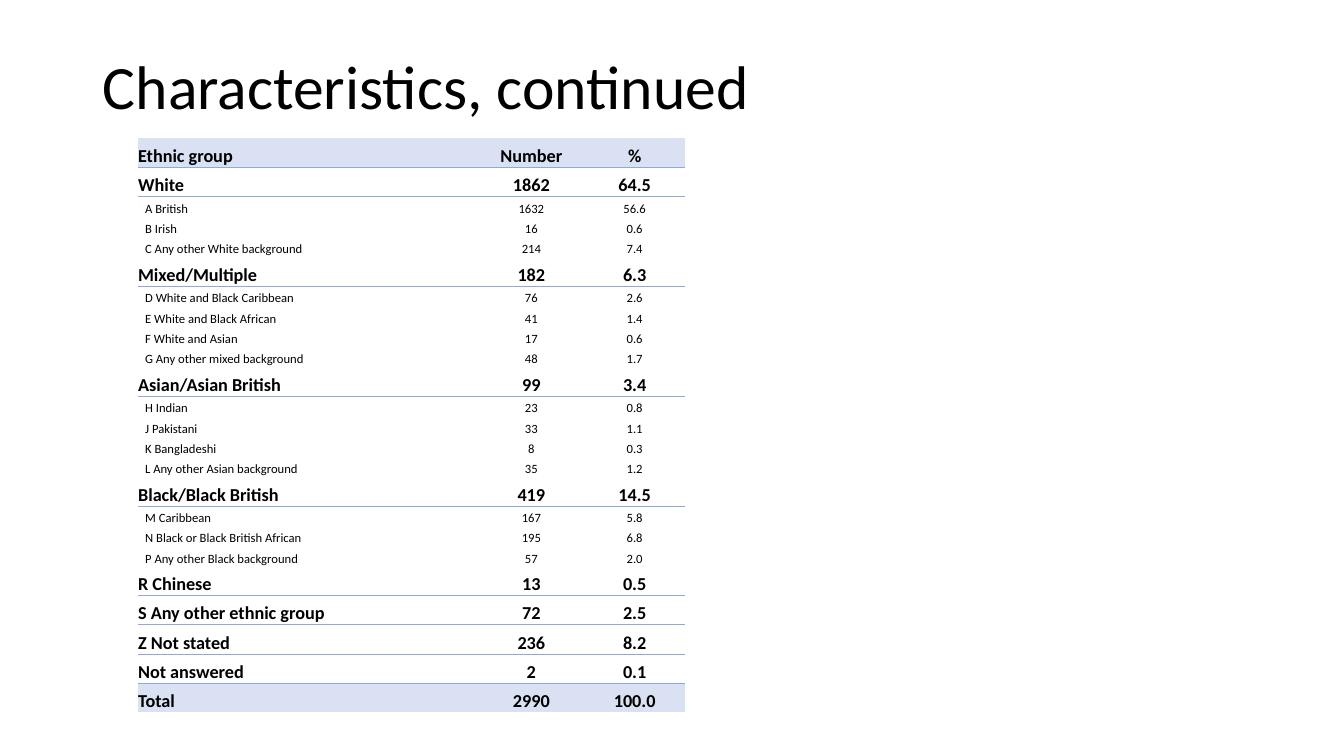
from lxml import etree
from pptx import Presentation
from pptx.dml.color import RGBColor
from pptx.enum.text import MSO_ANCHOR, PP_ALIGN
from pptx.oxml.ns import qn
from pptx.util import Inches, Pt

LEFT, CENTER = PP_ALIGN.LEFT, PP_ALIGN.CENTER
MIDDLE, BOTTOM = MSO_ANCHOR.MIDDLE, MSO_ANCHOR.BOTTOM
COLORS = {"text": "000000", "band": "D9E1F2", "rule": "8EA9DB"}
FONT = "Calibri"
TITLE_ONLY = 5

GROUPS = [
    (("Ethnic group", "Number", "%"), []),
    (("White", "1862", "64.5"), [
        ("A British", "1632", "56.6"),
        ("B Irish", "16", "0.6"),
        ("C Any other White background", "214", "7.4"),
    ]),
    (("Mixed/Multiple", "182", "6.3"), [
        ("D White and Black Caribbean", "76", "2.6"),
        ("E White and Black African", "41", "1.4"),
        ("F White and Asian", "17", "0.6"),
        ("G Any other mixed background", "48", "1.7"),
    ]),
    (("Asian/Asian British", "99", "3.4"), [
        ("H Indian", "23", "0.8"),
        ("J Pakistani", "33", "1.1"),
        ("K Bangladeshi", "8", "0.3"),
        ("L Any other Asian background", "35", "1.2"),
    ]),
    (("Black/Black British", "419", "14.5"), [
        ("M Caribbean", "167", "5.8"),
        ("N Black or Black British African", "195", "6.8"),
        ("P Any other Black background", "57", "2.0"),
    ]),
    (("R Chinese", "13", "0.5"), []),
    (("S Any other ethnic group", "72", "2.5"), []),
    (("Z Not stated", "236", "8.2"), []),
    (("Not answered", "2", "0.1"), []),
    (("Total", "2990", "100.0"), []),
]
COLUMN_WIDTHS = [3.37, 1.06, 0.99]
GROUP_HEIGHT, DETAIL_HEIGHT = 0.29, 0.2


def add_span(para, text, size, bold=False):
    span = para.add_run()
    span.text = text
    span.font.name = FONT
    span.font.size = Pt(size)
    span.font.bold = bold
    span.font.color.rgb = RGBColor.from_string(COLORS["text"])


def set_borders(cell, ruled_sides):
    properties = cell._tc.get_or_add_tcPr()
    for side in ("L", "R", "T", "B"):
        line = etree.SubElement(properties, qn(f"a:ln{side}"))
        if side in ruled_sides:
            line.set("w", str(Pt(0.5)))
            fill = etree.SubElement(line, qn("a:solidFill"))
            etree.SubElement(fill, qn("a:srgbClr"), val=COLORS["rule"])
        else:
            etree.SubElement(line, qn("a:noFill"))


deck = Presentation()
deck.slide_width, deck.slide_height = Inches(13.33), Inches(7.5)
page = deck.slides.add_slide(deck.slide_layouts[TITLE_ONLY])

title = page.shapes.title
title.left, title.top = Inches(0.92), Inches(0.4)
title.width, title.height = Inches(11.5), Inches(0.97)
title.text_frame.vertical_anchor = MIDDLE
para = title.text_frame.paragraphs[0]
para.alignment = LEFT
para.line_spacing = 0.9
add_span(para, "Characteristics, continued", 44)

rows = []
for group, details in GROUPS:
    rows.append((group, True))
    rows.extend((detail, False) for detail in details)
last = len(rows) - 1

heights = [GROUP_HEIGHT if is_group else DETAIL_HEIGHT for _, is_group in rows]
table = page.shapes.add_table(
    len(rows), len(COLUMN_WIDTHS), Inches(1.37), Inches(1.37),
    Inches(sum(COLUMN_WIDTHS)), Inches(sum(heights)),
).table
table.first_row = False
table.horz_banding = False
for column, width in zip(table.columns, COLUMN_WIDTHS):
    column.width = Inches(width)

for row_index, (values, is_group) in enumerate(rows):
    table.rows[row_index].height = Inches(heights[row_index])
    ruled_sides = ""
    if row_index > 0 and rows[row_index - 1][1]:
        ruled_sides += "T"
    if is_group and row_index < last:
        ruled_sides += "B"
    for column_index, value in enumerate(values):
        cell = table.cell(row_index, column_index)
        is_label = column_index == 0
        cell.margin_left = Inches(0.07 if is_label and not is_group else 0)
        cell.margin_right = cell.margin_top = cell.margin_bottom = 0
        cell.vertical_anchor = BOTTOM
        set_borders(cell, ruled_sides)
        if row_index in (0, last):
            cell.fill.solid()
            cell.fill.fore_color.rgb = RGBColor.from_string(COLORS["band"])
        else:
            cell.fill.background()
        para = cell.text_frame.paragraphs[0]
        para.alignment = LEFT if is_label else CENTER
        add_span(para, value, 13 if is_group else 9, is_group)

deck.save("out.pptx")
